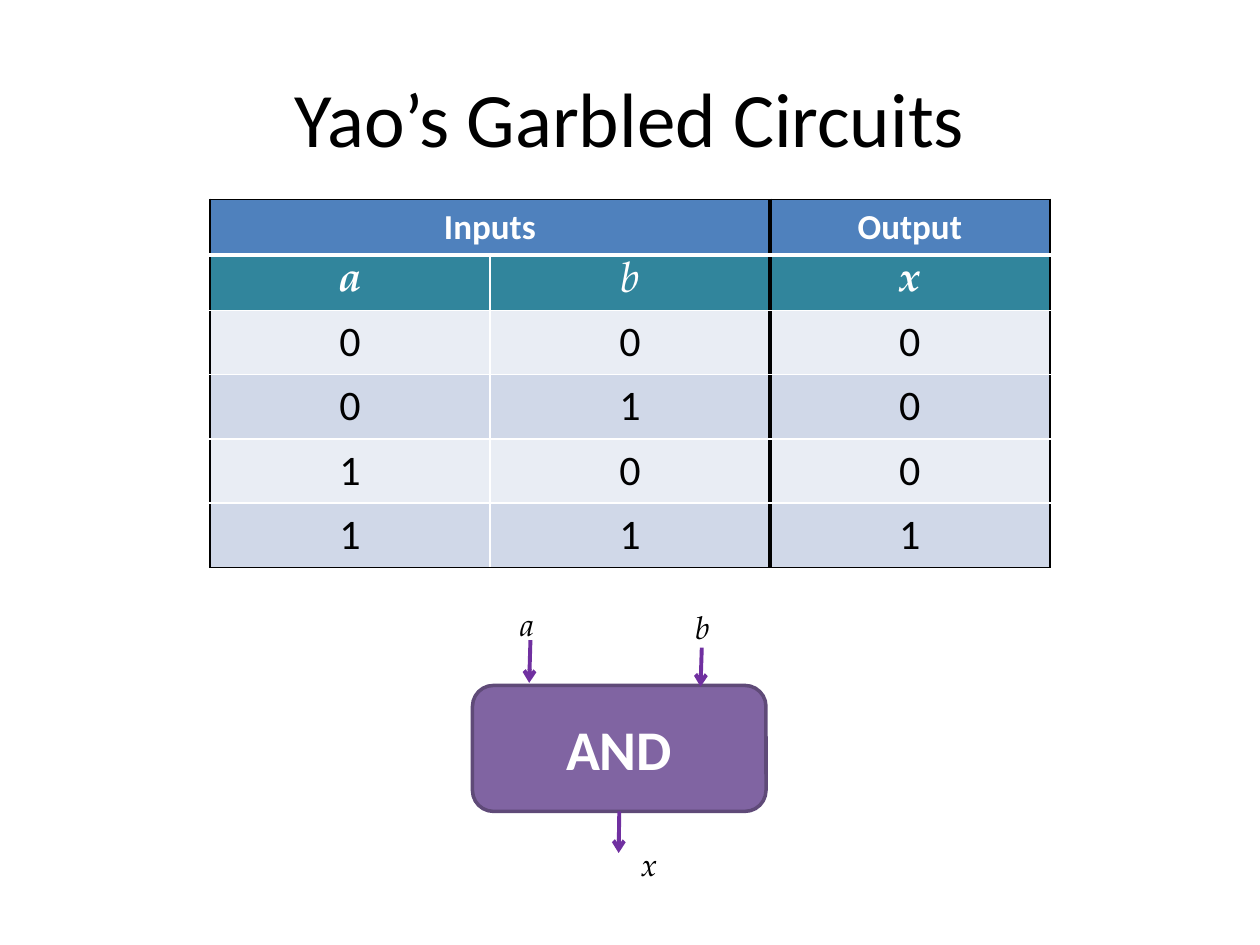
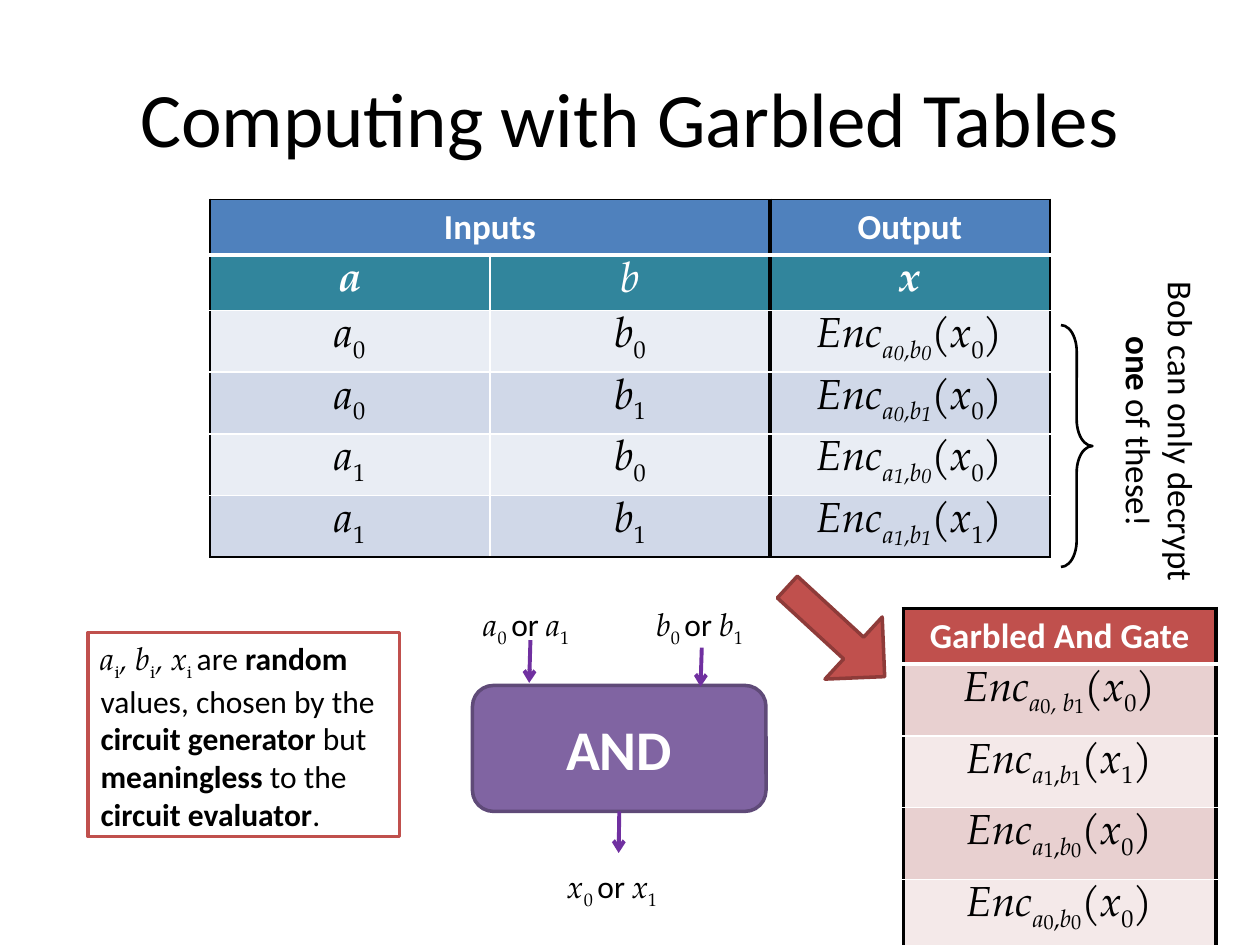
"""Builds two slides on garbled circuits: an AND truth table and its garbled form."""
from lxml.etree import SubElement
from pptx import Presentation
from pptx.dml.color import RGBColor
from pptx.enum.shapes import MSO_CONNECTOR, MSO_SHAPE
from pptx.enum.text import MSO_ANCHOR, MSO_AUTO_SIZE, PP_ALIGN
from pptx.oxml.ns import qn
from pptx.util import Emu, Inches, Pt

COLORS = {name: RGBColor.from_string(value) for name, value in {
    "black": "000000", "white": "FFFFFF", "blue": "4F81BD", "teal": "31859C",
    "light": "E9EDF4", "band": "D0D8E8", "purple": "8064A2", "purple edge": "5F4A78",
    "wire": "7030A0", "red": "C0504D", "red edge": "8E3B39",
    "pink": "E8D0D0", "pale pink": "F4E9E9"}.items()}
SANS, MATH = "Calibri", "TeX Gyre Pagella"
COLUMNS = 100
UNIT = Inches(10) / COLUMNS


def grid(*cells):
    """Turn counts of grid cells into lengths."""
    return [Emu(round(cell * UNIT)) for cell in cells]


def write(frame, pieces, size, color="black", alignment=PP_ALIGN.CENTER):
    """Write (text, style) pieces: c sans, b bold, i italic, s subscript, d deep subscript."""
    paragraph = frame.paragraphs[0]
    paragraph.alignment = alignment
    paragraph.font.size = Pt(size)
    paragraph.font.color.rgb = COLORS[color]
    for text, style in pieces:
        run = paragraph.add_run()
        run.text = text
        run.font.name = SANS if "c" in style else MATH
        run.font.bold = "b" in style
        run.font.italic = "i" in style
        if "d" in style:
            run.font.size = Pt(size - 4)
            run.font._element.set("baseline", "-36000")
        elif "s" in style:
            run.font._element.set("baseline", "-25000")


presentation = Presentation()
presentation.slide_width, presentation.slide_height = grid(COLUMNS, 75)
titles = ["Yao’s Garbled Circuits", "Computing with Garbled Tables"]
slides = [presentation.slides.add_slide(presentation.slide_layouts[6]) for title in titles]
truth_slide, garbled_slide = slides

bits = [(a, b, str(int(a + b == "11"))) for a in "01" for b in "01"]
shuffled = [("0", "1", ", ", "i"), ("1", "1", ",", ""), ("1", "0", ",", ""), ("0", "0", ",", "")]
truth_rows = [[[(bit, "c")] for bit in row] for row in bits]
label_rows = [
    [[("a", "i"), (a, "s")], [("b", "i"), (b, "s")],
     [("Enc", "i"), ("a", "is"), (a, "id"), (",b", "is"), (b, "id"),
      ("(", ""), ("x", "i"), (x, "s"), (")", "")]]
    for a, b, x in bits]
gate_rows = [
    [[("Enc", "i"), ("a", "is"), (a, "d"), (comma, "s" + slant), ("b", "is"), (b, "d"),
      ("(", ""), ("x", "i"), (str(int(a + b == "11")), "s"), (")", "")]]
    for a, b, comma, slant in shuffled]

headings = [
    [[("Inputs", "cb")], [], [("Output", "cb")]],
    [[("a", "bi")], [("b", "i")], [("x", "bi")]]]
heading_fills = ["blue", "teal"]
bands = ["light", "band"] * 2
tables = [
    (truth_slide, 16.67, 15.83, 22.22, 5.1, headings, truth_rows, heading_fills + bands, 1),
    (garbled_slide, 16.67, 15.83, 22.22, 4.9, headings, label_rows, heading_fills + bands, 1),
    (garbled_slide, 71.7, 48.3, 24.8, 5.7, [[[("Garbled And Gate", "cb")]]], gate_rows,
     ["red"] + ["pink", "pale pink"] * 2, 2.25)]

for slide, left, top, column_width, row_height, heads, body, fills, outer in tables:
    rows = heads + body
    row_count, column_count = len(rows), len(rows[0])
    heights = [4.4] * len(heads) + [row_height] * len(body)
    table = slide.shapes.add_table(
        row_count, column_count,
        *grid(left, top, column_width * column_count, sum(heights))).table
    table.first_row = table.horz_banding = False
    for column in table.columns:
        column.width = grid(column_width)[0]
    for row, height in zip(table.rows, heights):
        row.height = grid(height)[0]
    if column_count > 1:
        table.cell(0, 0).merge(table.cell(0, 1))

    across = [("black", outer), ("white", 3)] + [("white", 1)] * (row_count - 2) + [("black", outer)]
    down = [("black", outer)] * (column_count + 1)
    if column_count > 1:
        down[1:3] = [("white", 1), ("black", 3)]

    for row_index, row in enumerate(rows):
        for column_index, pieces in enumerate(row):
            cell = table.cell(row_index, column_index)
            if cell.is_spanned:
                continue
            right = column_index + (cell.span_width if cell.is_merge_origin else 1)
            borders = {"a:lnL": down[column_index], "a:lnR": down[right],
                       "a:lnT": across[row_index], "a:lnB": across[row_index + 1]}
            properties = cell._tc.get_or_add_tcPr()
            for tag, (color, width) in borders.items():
                border = SubElement(properties, qn(tag), w=str(Pt(width)))
                solid = SubElement(border, qn("a:solidFill"))
                SubElement(solid, qn("a:srgbClr"), val=str(COLORS[color]))
            cell.fill.solid()
            cell.fill.fore_color.rgb = COLORS[fills[row_index]]
            write(cell.text_frame, pieces, 20 if row_index == 0 else 24,
                  "white" if row_index < len(heads) else "black")

wires = [(42.1, 50.8, 42, 54.2), (55.7, 51.4, 55.6, 54.5), (49.15, 64.4, 49.1, 67.7)]
single_labels = [("a", 40.3, 47.5, 3.1), ("b", 54.2, 47.8, 3.2), ("x", 49.9, 66.6, 3.3)]
paired_labels = [("a", 37.4, 47.5, 9.6), ("b", 51.1, 47.5, 9.7), ("x", 44.1, 68.3, 9.7)]

for slide, title, labels in zip(slides, titles, [single_labels, paired_labels]):
    title_box = slide.shapes.add_textbox(*grid(5, 3, 90, 12.5))
    title_box.text_frame.word_wrap = True
    title_box.text_frame.vertical_anchor = MSO_ANCHOR.MIDDLE
    write(title_box.text_frame, [(title, "c")], 44)

    gate = slide.shapes.add_shape(MSO_SHAPE.ROUNDED_RECTANGLE, *grid(37.5, 54.4, 23.3, 10))
    gate.shadow.inherit = False
    gate.fill.solid()
    gate.fill.fore_color.rgb = COLORS["purple"]
    gate.line.color.rgb = COLORS["purple edge"]
    gate.line.width = Pt(2)
    write(gate.text_frame, [("AND", "cb")], 32, "white")

    for wire in wires:
        connector = slide.shapes.add_connector(MSO_CONNECTOR.STRAIGHT, *grid(*wire))
        connector.line.color.rgb = COLORS["wire"]
        connector.line.width = Pt(2.25)
        SubElement(connector.line._get_or_add_ln(), qn("a:tailEnd"), type="arrow")
        SubElement(connector._element.spPr, qn("a:effectLst"))
    connector.begin_connect(gate, 2)

    for letter, left, top, width in labels:
        label = slide.shapes.add_textbox(*grid(left, top, width, 4))
        label.text_frame.word_wrap = False
        label.text_frame.auto_size = MSO_AUTO_SIZE.SHAPE_TO_FIT_TEXT
        pieces = [(letter, "i")]
        if slide is garbled_slide:
            pieces += [("0 ", "s"), ("or ", "c"), (letter, "i"), ("1", "s")]
        write(label.text_frame, pieces, 18, alignment=PP_ALIGN.LEFT)

random_text = [
    ("a", "i"), ("i", "s"), (", b", "i"), ("i", "s"), (", x", "i"), ("i ", "s"),
    ("are ", "c"), ("random", "cb"), (" values, chosen by the ", "c"),
    ("circuit generator", "cb"), (" but ", "c"), ("meaningless", "cb"),
    (" to the ", "c"), ("circuit evaluator", "cb"), (".", "c")]
decrypt_text = [("Bob can only decrypt ", "c"), ("one", "cb"), (" of these!", "c")]
notes = [
    ((7, 50.2, 24.7, 16.2), 0, "red", random_text, 18, PP_ALIGN.LEFT),
    ((78.9, 30.4, 26.4, 7.7), 90, None, decrypt_text, 20, PP_ALIGN.CENTER)]
for place, rotation, edge, pieces, size, alignment in notes:
    note = garbled_slide.shapes.add_shape(MSO_SHAPE.RECTANGLE, *grid(*place))
    note.shadow.inherit = False
    note.rotation = rotation
    note.fill.solid()
    note.fill.fore_color.rgb = COLORS["white"]
    if edge:
        note.line.color.rgb = COLORS[edge]
        note.line.width = Pt(2)
    else:
        note.line.fill.background()
    note.text_frame.word_wrap = True
    note.text_frame.vertical_anchor = MSO_ANCHOR.TOP
    write(note.text_frame, pieces, size, alignment=alignment)

brace = garbled_slide.shapes.add_shape(MSO_SHAPE.RIGHT_BRACE, *grid(84.2, 25.8, 2.5, 19.2))
brace.shadow.inherit = False
brace.adjustments[0] = 0.84
brace.fill.background()
brace.line.color.rgb = COLORS["black"]
brace.line.width = Pt(1.5)

arrow = garbled_slide.shapes.add_shape(MSO_SHAPE.RIGHT_ARROW, *grid(61.1, 46.8, 10.5, 6.7))
arrow.shadow.inherit = False
arrow.rotation = 42.6
arrow.adjustments[0] = 0.35
arrow.fill.solid()
arrow.fill.fore_color.rgb = COLORS["red"]
arrow.line.color.rgb = COLORS["red edge"]
arrow.line.width = Pt(2)

presentation.save("out.pptx")
